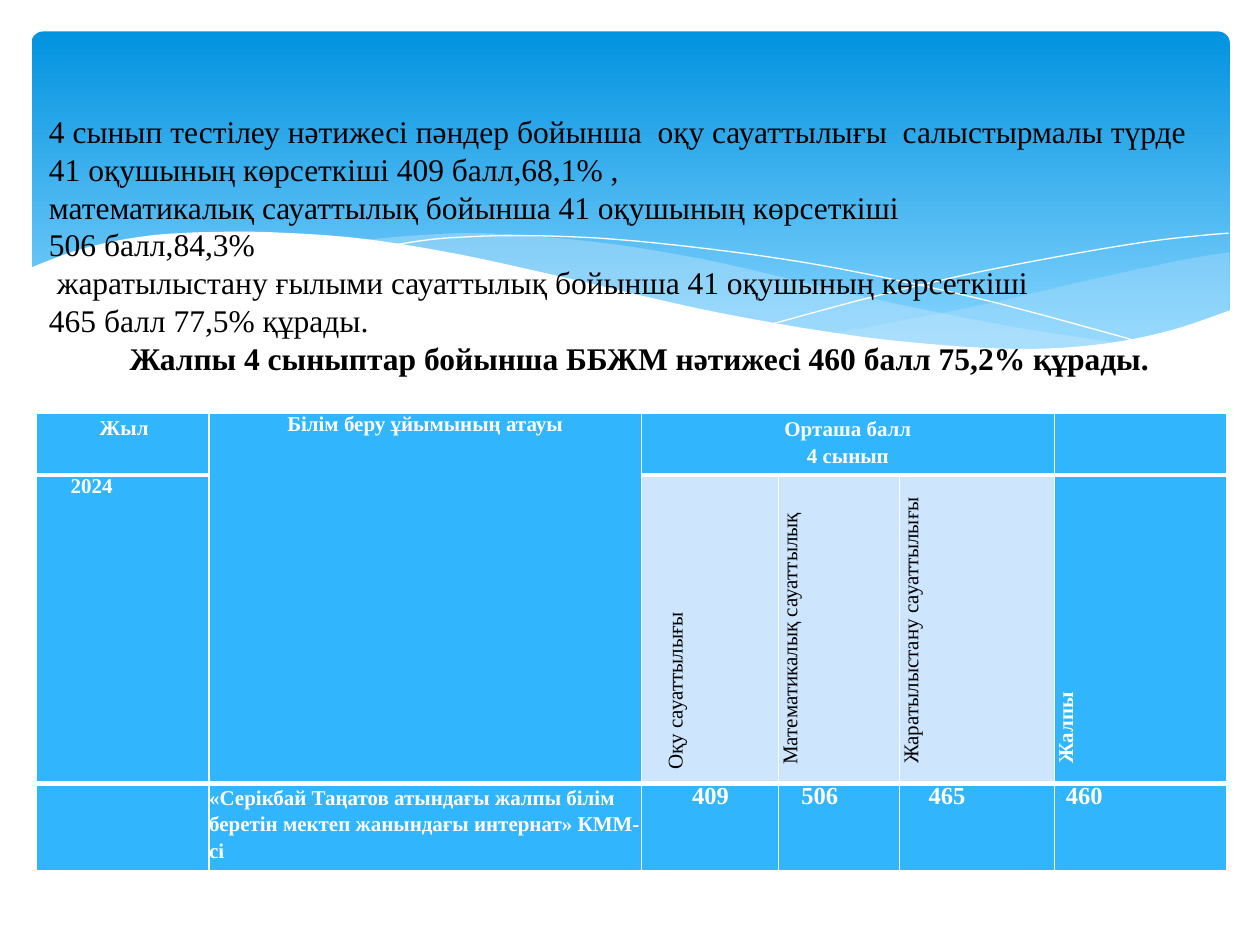
import pptx
import pptx.util
import pptx.dml.color
import pptx.enum.shapes
import pptx.enum.text
import pptx.oxml
from lxml import etree
from pptx.oxml.ns import qn

Inches, Pt = pptx.util.Inches, pptx.util.Pt
CENTER = pptx.enum.text.PP_ALIGN.CENTER
FONT = "Times New Roman"
WHITE, BLACK, BLUE, PALE = "FFFFFF", "000000", "31B6FD", "CEE5FE"
UNITS = 1000  # freeform grid units per inch


def color(hex_code):
    return pptx.dml.color.RGBColor.from_string(hex_code)


def apply(target, values):
    for name, value in values.items():
        setattr(target, name, value)


def add_text(frame, lines, size, ink, bold=False, align=None, indent=0, spacing=None):
    """Fill a text frame with one paragraph per line."""
    for number, line in enumerate(lines):
        paragraph = frame.paragraphs[0] if number == 0 else frame.add_paragraph()
        if align is not None:
            paragraph.alignment = align
        if spacing:
            paragraph.line_spacing = Pt(spacing)
        if indent:
            paragraph._p.get_or_add_pPr().set("marL", str(Inches(indent)))
        run = paragraph.add_run()
        run.text = line
        apply(run.font, {"size": Pt(size), "name": FONT, "bold": bold})
        run.font.color.rgb = color(ink)


def smooth(points, steps=6):
    """Catmull-Rom curve through the given points."""
    padded = [points[0], *points, points[-1]]
    curve = []
    for a, b, c, d in zip(padded, padded[1:], padded[2:], padded[3:]):
        for step in range(steps):
            t = step / steps
            curve.append(tuple(
                0.5 * (2 * q + (r - p) * t + (2 * p - 5 * q + 4 * r - s) * t ** 2
                       + (3 * q - p - 3 * r + s) * t ** 3)
                for p, q, r, s in zip(a, b, c, d)))
    return curve + [points[-1]]


def add_wave(slide, points, fill=None, alpha=None):
    """A filled outline, or a thin white open curve when no fill is given."""
    start, *rest = [(round(x * UNITS), round(y * UNITS)) for x, y in points]
    builder = slide.shapes.build_freeform(*start, scale=Inches(1) / UNITS)
    builder.add_line_segments(rest, close=fill is not None)
    wave = builder.convert_to_shape()
    wave.shadow.inherit = False
    if fill is None:
        wave.fill.background()
        wave.line.color.rgb = color(WHITE)
        wave.line.width = Pt(0)
        return
    wave.fill.solid()
    wave.fill.fore_color.rgb = color(fill)
    wave.line.fill.background()
    if alpha:
        tint = wave._element.spPr.find(qn("a:solidFill"))[0]
        etree.SubElement(tint, qn("a:alpha")).set("val", str(alpha * 1000))


def add_backdrop(slide, left, top, width, height):
    # Blue gradient panel
    panel = slide.shapes.add_shape(
        pptx.enum.shapes.MSO_SHAPE.ROUNDED_RECTANGLE,
        Inches(left), Inches(top), Inches(width), Inches(height))
    panel.adjustments[0] = 0.034
    panel.shadow.inherit = False
    panel.line.fill.background()
    panel.fill.gradient()
    panel.fill.gradient_angle = 270
    for stop, (position, shade) in zip(panel.fill.gradient_stops,
                                       [(0, "0293E0"), (0.9, "83D3FE")]):
        stop.position = position
        stop.color.rgb = color(shade)

    # Translucent waves
    right = left + width
    add_wave(slide,
             smooth([(right, 2), (9.35, 2.07), (8.61, 2.23), (7.79, 2.42), (6.61, 2.65)])
             + smooth([(6.61, 2.65), (7.19, 2.72), (7.81, 2.77), (8.35, 2.77),
                       (8.89, 2.72), (9.35, 2.62), (right, 2.47)]), "C6E7FC", 29)
    add_wave(slide,
             smooth([(8.93, 2.73), (8.07, 2.6), (7.06, 2.4), (6.29, 2.22), (5.69, 2.08),
                     (5.02, 1.96), (4.42, 1.89), (3.8, 1.85), (3.28, 1.87), (2.86, 1.91)])
             + smooth([(2.86, 1.91), (3.62, 2.03), (4.49, 2.22), (5.3, 2.4), (6.18, 2.58),
                       (6.95, 2.7), (7.61, 2.77), (8.18, 2.78), (8.93, 2.73)]), "C6E7FC", 40)

    # Thin white curves
    add_wave(slide, smooth([(3.09, 1.95), (3.53, 1.89), (4.16, 1.87), (4.89, 1.9),
                            (5.82, 2), (6.65, 2.13), (7.6, 2.33), (8.31, 2.51), (9.07, 2.72)]))
    add_wave(slide, smooth([(6.13, 2.57), (6.95, 2.35), (7.76, 2.16), (8.66, 1.99),
                            (9.24, 1.9), (9.75, 1.85)]))

    # White wave that closes the panel
    add_wave(slide,
             smooth([(9.77, 2.46), (9.3, 2.62), (8.75, 2.73), (8.09, 2.77), (7.26, 2.72),
                     (6.48, 2.62), (5.55, 2.45), (4.47, 2.2), (3.65, 2.02), (2.92, 1.9),
                     (2.3, 1.85), (1.77, 1.84), (1.19, 1.87), (0.67, 1.97), (0.23, 2.13)])
             + [(0.23, 3.29), (9.77, 3.29)], WHITE)


def add_summary(slide, left, top, width, height):
    summary = slide.shapes.add_textbox(
        Inches(left), Inches(top), Inches(width), Inches(height)).text_frame
    summary.word_wrap = True
    add_text(summary, [
        "4 сынып тестілеу нәтижесі пәндер бойынша  оқу сауаттылығы  салыстырмалы түрде "
        "41 оқушының көрсеткіші 409 балл,68,1% ,",
        "математикалық сауаттылық бойынша 41 оқушының көрсеткіші",
        "506 балл,84,3%",
        " жаратылыстану ғылыми сауаттылық бойынша 41 оқушының көрсеткіші",
        "465 балл 77,5% құрады.",
        "Жалпы 4 сыныптар бойынша ББЖМ нәтижесі 460 балл 75,2% құрады.",
    ], 18, BLACK)
    total = summary.paragraphs[-1]
    total.alignment = CENTER
    total._p.get_or_add_pPr().set("marL", str(Inches(0.12)))
    total.runs[0].font.bold = True


def set_borders(cell, widths):
    properties = cell._tc.get_or_add_tcPr()
    for position, (side, points) in enumerate(zip(("lnL", "lnR", "lnT", "lnB"), widths)):
        border = etree.Element(qn("a:" + side), w=str(Pt(points)))
        paint = etree.SubElement(border, qn("a:solidFill"))
        etree.SubElement(paint, qn("a:srgbClr"), val=WHITE)
        properties.insert(position, border)


def add_scores(slide, left, top, columns, rows):
    table = slide.shapes.add_table(
        len(rows), len(columns), Inches(left), Inches(top),
        Inches(sum(columns)), Inches(sum(rows))).table
    apply(table, {"first_row": False, "horz_banding": False})
    for column, width in zip(table.columns, columns):
        column.width = Inches(width)
    for row, height in zip(table.rows, rows):
        row.height = Inches(height)
    table.cell(0, 1).merge(table.cell(1, 1))
    table.cell(0, 2).merge(table.cell(0, 4))

    # Fills and borders: thick lines between the rows
    no_margins = dict.fromkeys(("margin_left", "margin_right", "margin_top", "margin_bottom"), 0)
    edges = [(1, 3), (3, 3), (3, 1)]
    for r, edge in enumerate(edges):
        for c in range(len(columns)):
            cell = table.cell(r, c)
            apply(cell, no_margins)
            cell.fill.solid()
            cell.fill.fore_color.rgb = color(PALE if r == 1 and 2 <= c <= 4 else BLUE)
            set_borders(cell, (1, 1, *edge))

    # Level text: row, column, lines, size, alignment, indent, line spacing
    for r, c, lines, size, align, indent, spacing in [
        (0, 0, ["Жыл"], 12, CENTER, 0.02, 15.1),
        (0, 1, ["Білім беру ұйымының атауы"], 12, CENTER, 0, None),
        (0, 2, ["Орташа балл", "4 сынып"], 12, CENTER, 0, 15.7),
        (1, 0, ["2024"], 12, None, 0.27, None),
        (2, 1, ["«Серікбай Таңатов атындағы жалпы білім беретін мектеп "
                "жанындағы интернат» КММ-сі"], 12, None, 0, 15.1),
        (2, 2, ["409"], 14, CENTER, 0.01, 15.1),
        (2, 3, ["506"], 14, None, 0.18, 15.1),
        (2, 4, ["465"], 14, None, 0.23, 15.1),
        (2, 5, ["460"], 14, None, 0.09, 15.1),
    ]:
        add_text(table.cell(r, c).text_frame, lines, size, WHITE, True, align, indent, spacing)

    # Upright subject headings
    for c, (subject, indent) in enumerate([
        ("Оқу сауаттылығы", 0.11), ("Математикалық сауаттылық", 0.15),
        ("Жаратылыстану сауаттылығы", 0.16), ("Жалпы", 0.16),
    ], start=2):
        heading = table.cell(1, c)
        heading._tc.get_or_add_tcPr().set("vert", "vert270")
        overall = subject == "Жалпы"
        add_text(heading.text_frame, [subject], 12, WHITE if overall else BLACK,
                 overall, indent=indent)
    table.cell(1, 2).margin_top = Inches(0.18)


def main():
    deck = pptx.Presentation()
    apply(deck, {"slide_width": Inches(10), "slide_height": Inches(7.5)})
    slide = deck.slides.add_slide(deck.slide_layouts[6])
    add_backdrop(slide, 0.25, 0.25, 9.51, 2.7)
    add_scores(slide, 0.29, 3.28, [1.37, 3.43, 1.09, 0.96, 1.23, 1.37], [0.49, 2.45, 0.69])
    add_summary(slide, 0.29, 0.84, 9.45, 2.22)
    deck.save("out.pptx")


if __name__ == "__main__":
    main()
